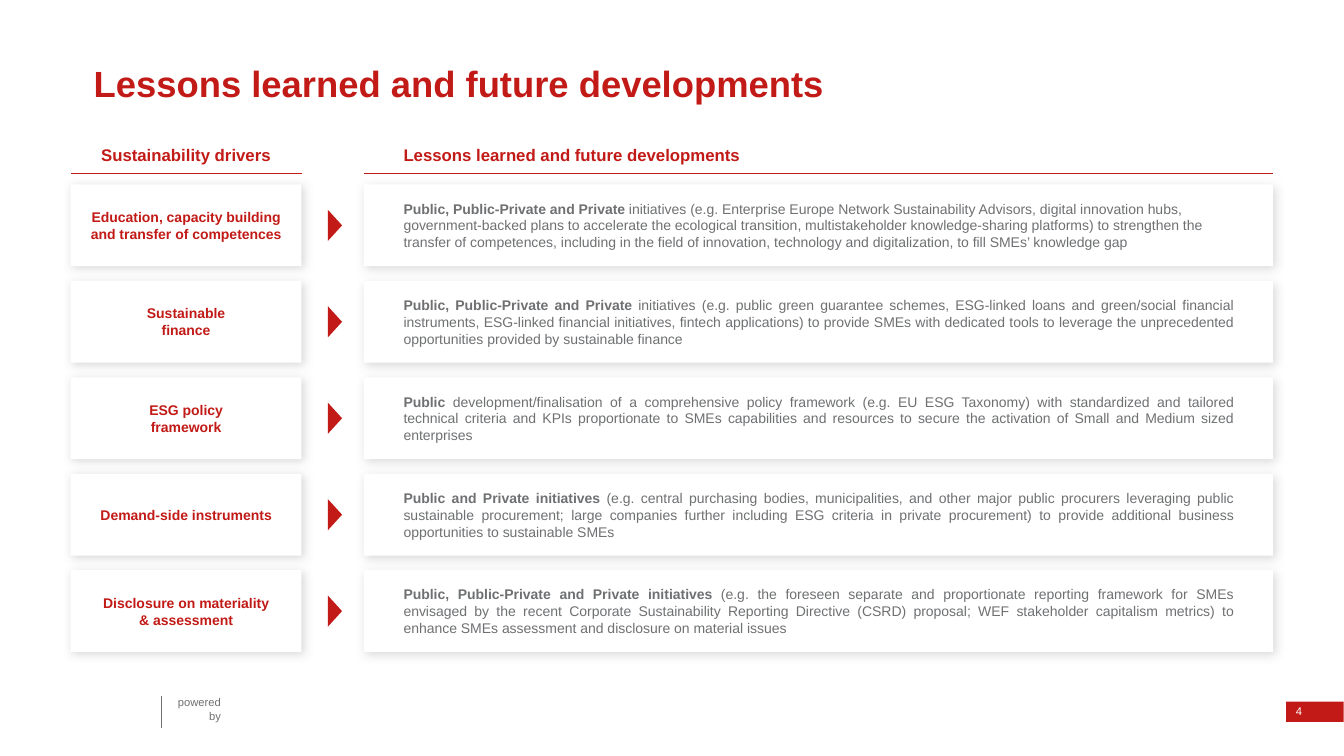
from dataclasses import dataclass

from lxml import etree
from pptx import Presentation
from pptx.dml.color import RGBColor
from pptx.enum.shapes import MSO_CONNECTOR, MSO_SHAPE
from pptx.enum.text import MSO_ANCHOR, PP_ALIGN
from pptx.oxml.ns import qn
from pptx.util import Cm, Pt


@dataclass(frozen=True)
class Theme:
    font: str = "Arial"
    red: RGBColor = RGBColor(0xC2, 0x1B, 0x17)
    grey: RGBColor = RGBColor(0x6F, 0x70, 0x72)
    white: RGBColor = RGBColor(0xFF, 0xFF, 0xFF)
    shadow: str = "808080"
    title: int = 26
    heading: int = 12
    body: int = 10
    small: int = 8


THEME = Theme()

# Column and row geometry in centimetres
DRIVER_LEFT, DRIVER_WIDTH = 1.78, 5.82
LESSON_LEFT, LESSON_WIDTH = 9.17, 22.91
FIRST_ROW_TOP, ROW_PITCH, CARD_HEIGHT = 4.65, 2.43, 2.06
ARROW_CENTRE, ARROW_BASE, ARROW_DEPTH = 8.44, 0.79, 0.36
HEADING_TOP, RULE_TOP = 3.53, 4.37

# Driver lines, bold lead, remaining lesson text, lesson alignment
ROWS = [
    (["Education, capacity building and transfer of competences"],
     "Public, Public-Private and Private",
     " initiatives (e.g. Enterprise Europe Network Sustainability Advisors, digital innovation "
     "hubs, government-backed plans to accelerate the ecological transition, multistakeholder "
     "knowledge-sharing platforms) to strengthen the transfer of competences, including in the "
     "field of innovation, technology and digitalization, to fill SMEs’ knowledge gap",
     PP_ALIGN.LEFT),
    (["Sustainable", "finance"],
     "Public, Public-Private and Private",
     " initiatives (e.g. public green guarantee schemes, ESG-linked loans and green/social "
     "financial instruments, ESG-linked financial initiatives, fintech applications) to provide "
     "SMEs with dedicated tools to leverage the unprecedented opportunities provided by "
     "sustainable finance",
     PP_ALIGN.JUSTIFY),
    (["ESG policy", "framework"],
     "Public",
     " development/finalisation of a comprehensive policy framework (e.g. EU ESG Taxonomy) with "
     "standardized and tailored technical criteria and KPIs proportionate to SMEs capabilities "
     "and resources to secure the activation of Small and Medium sized enterprises",
     PP_ALIGN.JUSTIFY),
    (["Demand-side instruments"],
     "Public and Private initiatives",
     " (e.g. central purchasing bodies, municipalities, and other major public procurers "
     "leveraging public sustainable procurement; large companies further including ESG criteria "
     "in private procurement) to provide additional business opportunities to sustainable SMEs",
     PP_ALIGN.JUSTIFY),
    (["Disclosure on materiality", "& assessment"],
     "Public, Public-Private and Private initiatives",
     " (e.g. the foreseen separate and proportionate reporting framework for SMEs envisaged by "
     "the recent Corporate Sustainability Reporting Directive (CSRD) proposal; WEF stakeholder "
     "capitalism metrics) to enhance SMEs assessment and disclosure on material issues",
     PP_ALIGN.JUSTIFY),
]


def format_run(run, size, color, bold=False):
    run.font.name = THEME.font
    run.font.size = Pt(size)
    run.font.color.rgb = color
    run.font.bold = bold


def set_frame(shape, side=0.25, edge=0.13, anchor=MSO_ANCHOR.TOP):
    frame = shape.text_frame
    frame.word_wrap = True
    frame.vertical_anchor = anchor
    frame.margin_left = frame.margin_right = Cm(side)
    frame.margin_top = frame.margin_bottom = Cm(edge)
    return frame


def write_lines(frame, lines, size, color, bold=False, align=PP_ALIGN.LEFT):
    frame.text = "\n".join(lines)
    for paragraph in frame.paragraphs:
        paragraph.alignment = align
        for run in paragraph.runs:
            format_run(run, size, color, bold)


def add_text(slide, box, lines, size, color, bold=False, align=PP_ALIGN.LEFT, **frame_options):
    shape = slide.shapes.add_textbox(*map(Cm, box))
    write_lines(set_frame(shape, **frame_options), lines, size, color, bold, align)


def add_block(slide, kind, box, color):
    shape = slide.shapes.add_shape(kind, *map(Cm, box))
    shape.shadow.inherit = False
    shape.fill.solid()
    shape.fill.fore_color.rgb = color
    shape.line.fill.background()
    return shape


def add_rule(slide, start, end, color):
    line = slide.shapes.add_connector(MSO_CONNECTOR.STRAIGHT, *map(Cm, start + end))
    line.line.color.rgb = color
    line.line.width = Pt(0.75)
    etree.SubElement(line._element.spPr, qn("a:effectLst"))


def add_card(slide, left, top, width, side):
    card = add_block(slide, MSO_SHAPE.RECTANGLE, (left, top, width, CARD_HEIGHT), THEME.white)
    effects = card._element.spPr.find(qn("a:effectLst"))
    shadow = etree.SubElement(effects, qn("a:outerShdw"), blurRad=str(Pt(7)), dist=str(Pt(2)),
                              dir=str(45 * 60000), algn="tl", rotWithShape="0")
    color = etree.SubElement(shadow, qn("a:srgbClr"), val=THEME.shadow)
    etree.SubElement(color, qn("a:alpha"), val="30000")
    return set_frame(card, side=side, anchor=MSO_ANCHOR.MIDDLE)


def add_heading(slide, left, width, text, align, side):
    add_text(slide, (left, HEADING_TOP, width, 0.76), [text], THEME.heading, THEME.red,
             bold=True, align=align, side=side)
    add_rule(slide, (left, RULE_TOP), (left + width, RULE_TOP), THEME.red)


def add_row(slide, top, driver_lines, lead, detail, align):
    driver = add_card(slide, DRIVER_LEFT, top, DRIVER_WIDTH, side=0.5)
    write_lines(driver, driver_lines, THEME.body, THEME.red, bold=True, align=PP_ALIGN.CENTER)

    lesson = add_card(slide, LESSON_LEFT, top, LESSON_WIDTH, side=1)
    write_lines(lesson, [lead], THEME.body, THEME.grey, bold=True, align=align)
    detail_run = lesson.paragraphs[0].add_run()
    detail_run.text = detail
    format_run(detail_run, THEME.body, THEME.grey)

    arrow_box = (ARROW_CENTRE - ARROW_BASE / 2, top + (CARD_HEIGHT - ARROW_DEPTH) / 2,
                 ARROW_BASE, ARROW_DEPTH)
    arrow = add_block(slide, MSO_SHAPE.ISOSCELES_TRIANGLE, arrow_box, THEME.red)
    arrow.rotation = 90


def add_footer(slide):
    add_text(slide, (4.22, 17.53, 1.35, 0.53), ["powered", "by"], THEME.small, THEME.grey,
             align=PP_ALIGN.RIGHT, side=0, edge=0)
    add_rule(slide, (4.06, 17.53), (4.06, 18.34), THEME.grey)
    add_block(slide, MSO_SHAPE.RECTANGLE, (32.41, 17.68, 1.45, 0.51), THEME.red)
    add_text(slide, (32.41, 17.6, 1.45, 0.66), ["4"], THEME.small, THEME.white,
             anchor=MSO_ANCHOR.MIDDLE)


def main():
    presentation = Presentation()
    presentation.slide_width = Cm(33.87)
    presentation.slide_height = Cm(19.05)
    slide = presentation.slides.add_slide(presentation.slide_layouts[6])

    # Title and column headings
    title = "Lessons learned and future developments"
    add_text(slide, (2.11, 1.4, 30.56, 1.32), [title], THEME.title, THEME.red, bold=True)
    add_heading(slide, DRIVER_LEFT, DRIVER_WIDTH, "Sustainability drivers", PP_ALIGN.CENTER, 0.25)
    add_heading(slide, LESSON_LEFT, LESSON_WIDTH, title, PP_ALIGN.LEFT, 1)

    # One driver, arrow and lesson per row
    for index, row in enumerate(ROWS):
        add_row(slide, FIRST_ROW_TOP + index * ROW_PITCH, *row)

    add_footer(slide)
    presentation.save("out.pptx")


if __name__ == "__main__":
    main()
